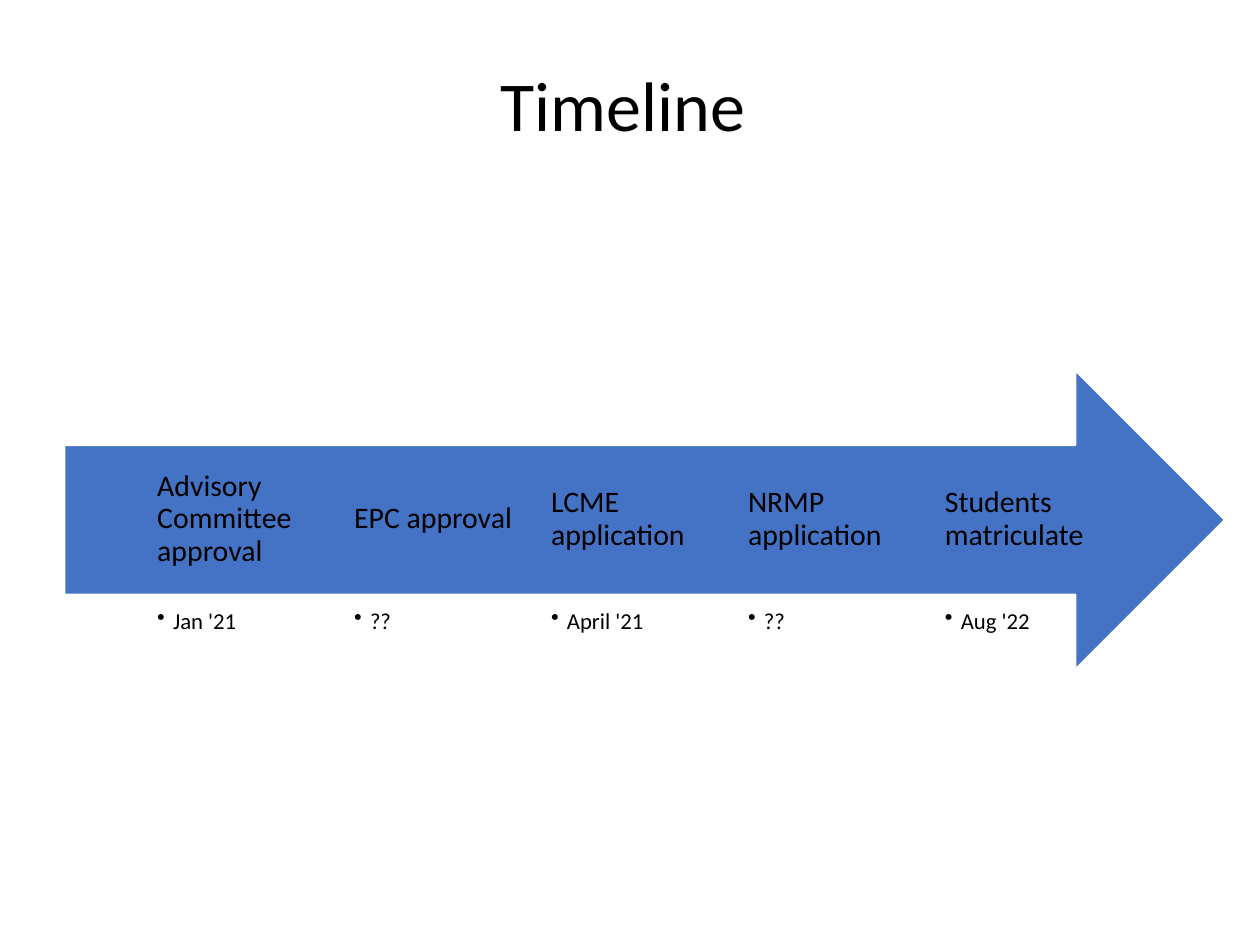
from lxml.etree import SubElement
from pptx import Presentation
from pptx.dml.color import RGBColor
from pptx.enum.shapes import MSO_SHAPE
from pptx.enum.text import MSO_ANCHOR as ANCHOR, PP_ALIGN as ALIGN
from pptx.oxml.ns import qn
from pptx.util import Cm, Pt

BLUE = RGBColor(0x44, 0x72, 0xC4)
WHITE = RGBColor(0xFF, 0xFF, 0xFF)
BLACK = RGBColor(0x00, 0x00, 0x00)

MILESTONES = [
    ("Advisory Committee approval", "Jan '21"),
    ("EPC approval", "??"),
    ("LCME application", "April '21"),
    ("NRMP application", "??"),
    ("Students matriculate", "Aug '22"),
]
FIRST_LEFT, STEP, COLUMN_WIDTH = 3.17, 3.97, 3.3


class TimelineSlide:
    """Draws the timeline's elements in one style on the current slide."""

    font = "Calibri"

    def __init__(self, slide):
        self.slide = slide
        self.group = slide.shapes.add_group_shape()

    def text(self, shapes, box, text, size, anchor=ANCHOR.TOP):
        sp = shapes.add_textbox(*map(Cm, box))
        tf = sp.text_frame
        tf.word_wrap = True
        tf.vertical_anchor = anchor
        p = tf.paragraphs[0]
        r = p.add_run()
        r.text = text
        r.font.name = self.font
        r.font.size = Pt(size)
        r.font.color.rgb = BLACK
        return tf, p

    def title(self, text):
        tf, p = self.text(self.slide.shapes, (2.31, 1.12, 20.5, 1.96), text, 40)
        p.alignment = ALIGN.CENTER

    def arrow(self):
        box = map(Cm, (1.3, 7.47, 23.39, 6.02))
        sp = self.group.shapes.add_shape(MSO_SHAPE.RIGHT_ARROW, *box)
        sp.shadow.inherit = False
        sp.fill.solid()
        sp.fill.fore_color.rgb = BLUE
        sp.line.color.rgb = WHITE
        sp.line.width = Pt(1)

    def column_text(self, left, top, height, text, size, inset, anchor):
        box = (left, top, COLUMN_WIDTH, height)
        tf, p = self.text(self.group.shapes, box, text, size, anchor)
        tf.margin_left = tf.margin_right = 0
        tf.margin_top = tf.margin_bottom = Cm(inset)
        p.line_spacing = 0.9
        return p

    def label(self, left, text):
        self.column_text(left, 8.97, 3, text, 17, 0.48, ANCHOR.MIDDLE)

    def date(self, left, text):
        p = self.column_text(left, 12.29, 0.84, text, 13, 0, ANCHOR.TOP)
        p.level = 1
        pPr = p._p.get_or_add_pPr()
        pPr.set("marL", str(Cm(0.32)))
        pPr.set("indent", str(Cm(-0.32)))
        SubElement(pPr, qn("a:buChar")).set("char", "•")


def main():
    prs = Presentation()
    prs.slide_width, prs.slide_height = Cm(25.4), Cm(19.05)
    s = TimelineSlide(prs.slides.add_slide(prs.slide_layouts[6]))
    s.arrow()
    for i, (label, date) in enumerate(MILESTONES):
        left = FIRST_LEFT + i * STEP
        s.date(left, date)
        s.label(left, label)
    s.title("Timeline")
    prs.save("out.pptx")


if __name__ == "__main__":
    main()
